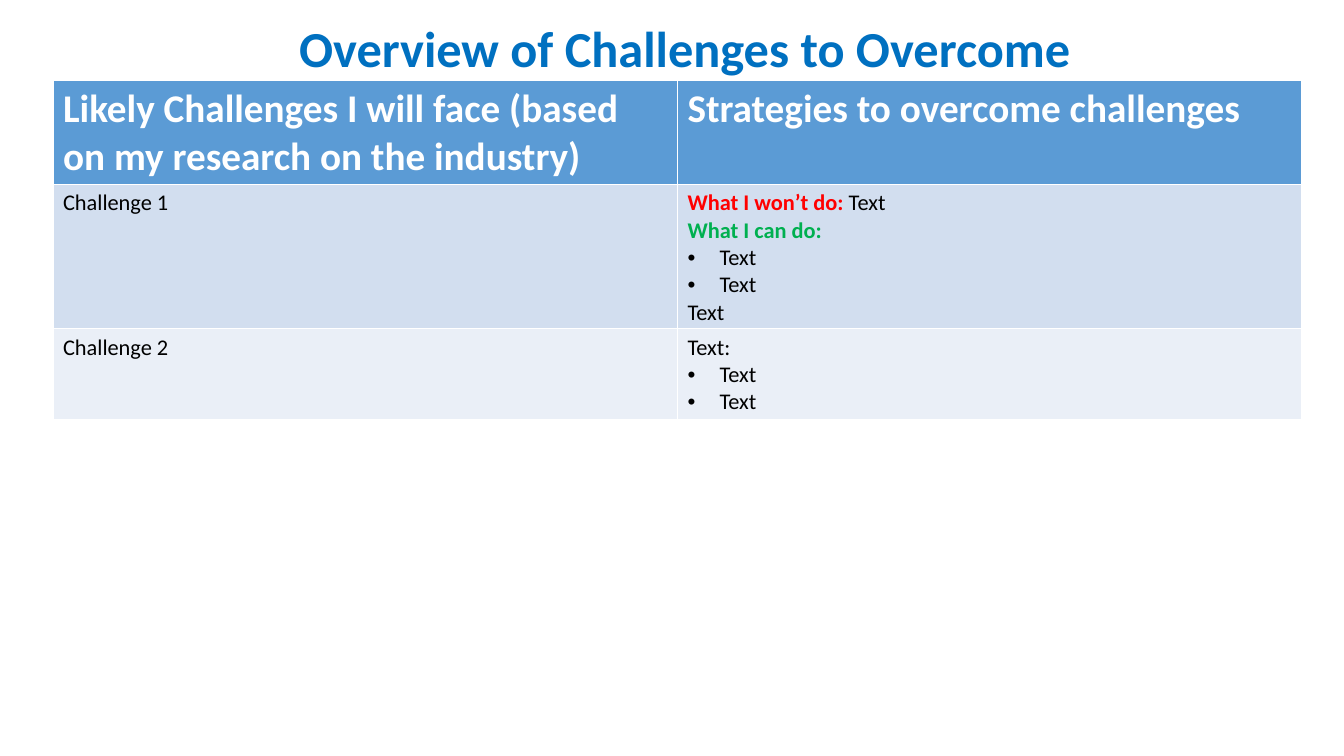
import pptx
import pptx.dml.color
import pptx.enum.text
import pptx.oxml
import pptx.oxml.ns
import pptx.util


def px(length):
    return pptx.util.Emu(round(length * 914400 / 100.8))


def add_span(para, text, size, color, bold):
    span = para.add_run()
    span.text = text
    span.font.color.rgb = pptx.dml.color.RGBColor.from_string(color)
    values = {"name": "Calibri", "size": pptx.util.Pt(size), "bold": bold}
    for name, value in values.items():
        setattr(span.font, name, value)


WHITE, BLACK, RED, GREEN, BLUE = "FFFFFF", "000000", "FF0000", "00B050", "0070C0"
ROW_FILLS = ["5B9BD5", "D2DEEF", "EAEFF7"]
INDENT = px(32)

# Each cell is a list of paragraphs: (bulleted, [(text, size, color, bold), ...])
text_span = ("Text", 16, BLACK, False)
bullet = (True, [text_span])
rows = [
    [
        [(False, [("Likely Challenges I will face (based on my research on the industry)",
                   28, WHITE, True)])],
        [(False, [("Strategies to overcome challenges", 28, WHITE, True)])],
    ],
    [
        [(False, [("Challenge 1", 16, BLACK, False)])],
        [
            (False, [("What I won’t do: ", 16, RED, True), text_span]),
            (False, [("What I can do:", 16, GREEN, True)]),
            bullet,
            bullet,
            (False, [text_span]),
        ],
    ],
    [
        [(False, [("Challenge 2", 16, BLACK, False)])],
        [(False, [("Text:", 16, BLACK, False)]), bullet, bullet],
    ],
]

# Page
deck = pptx.Presentation()
deck.slide_width, deck.slide_height = px(1344), px(756)
page = deck.slides.add_slide(deck.slide_layouts[5])

# Title
title = page.shapes.title
for name, value in {"left": 93, "top": 12, "width": 1184, "height": 72}.items():
    setattr(title, name, px(value))
frame_format = {
    "word_wrap": True,
    "auto_size": pptx.enum.text.MSO_AUTO_SIZE.SHAPE_TO_FIT_TEXT,
    "vertical_anchor": pptx.enum.text.MSO_ANCHOR.TOP,
}
for name, value in frame_format.items():
    setattr(title.text_frame, name, value)
para = title.text_frame.paragraphs[0]
para.alignment = pptx.enum.text.PP_ALIGN.CENTER
add_span(para, "Overview of Challenges to Overcome", 36, BLUE, True)

# Table: the default style supplies the white borders
frame = page.shapes.add_table(3, 2, px(53), px(80), px(1249), px(340))
table = frame.table
for row, cells, fill in zip(table.rows, rows, ROW_FILLS):
    row.height = px(80)
    for cell, paragraphs in zip(row.cells, cells):
        cell.fill.solid()
        cell.fill.fore_color.rgb = pptx.dml.color.RGBColor.from_string(fill)
        for index, (bulleted, spans) in enumerate(paragraphs):
            box = cell.text_frame
            para = box.add_paragraph() if index else box.paragraphs[0]
            for span in spans:
                add_span(para, *span)
            if bulleted:
                properties = para._p.get_or_add_pPr()
                properties.set("marL", str(INDENT))
                properties.set("indent", str(-INDENT))
                for tag, key, value in [("buFont", "typeface", "Arial"),
                                        ("buChar", "char", "•")]:
                    mark = pptx.oxml.parse_xml(
                        f'<a:{tag} {pptx.oxml.ns.nsdecls("a")} {key}="{value}"/>')
                    properties.append(mark)
frame.height = px(340)

deck.save("out.pptx")
